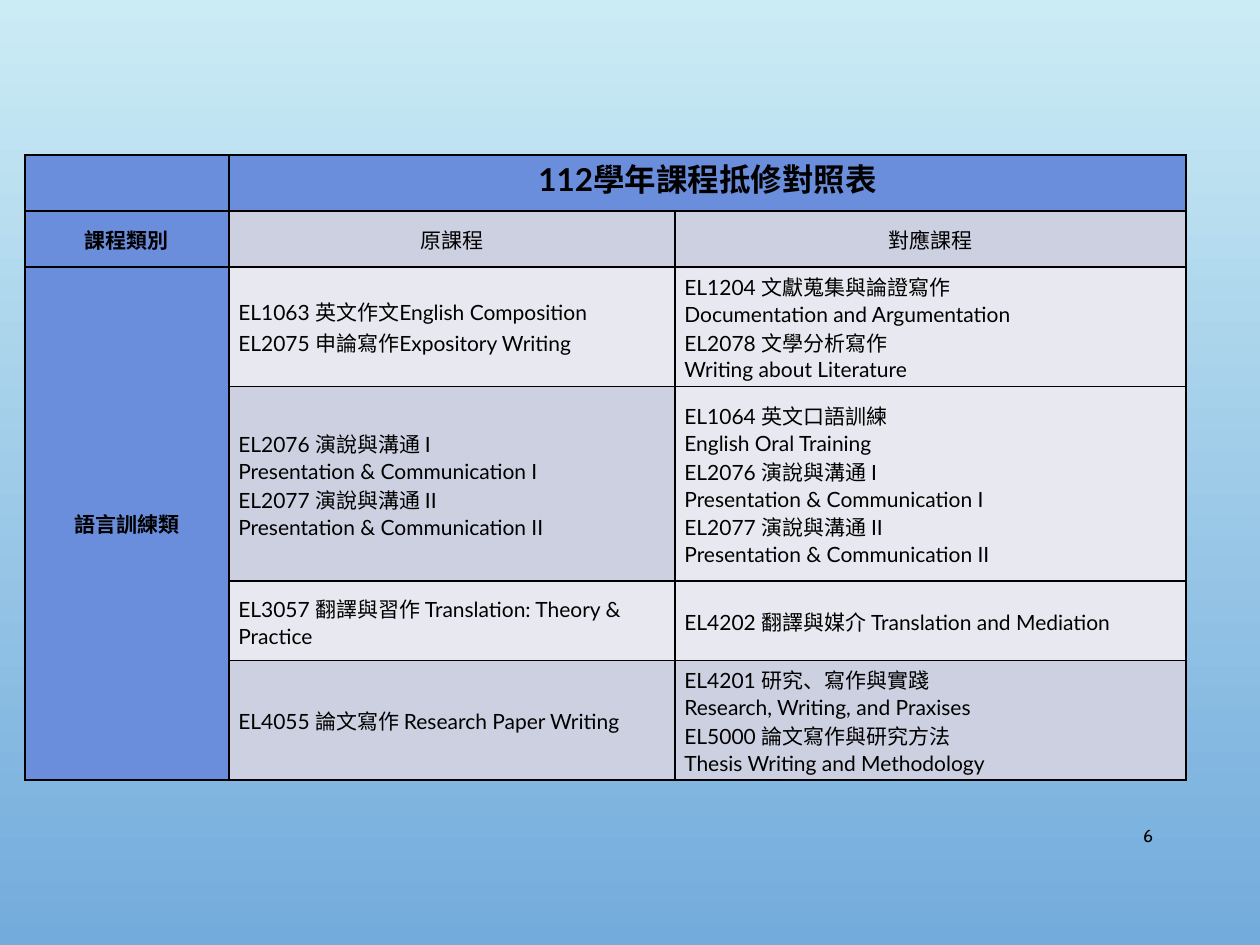
"""Build the course substitution table slide."""
from pptx import Presentation
from pptx.dml.color import RGBColor as Rgb
from pptx.enum.text import MSO_ANCHOR as Anchor, PP_ALIGN as Align
from pptx.oxml import parse_xml
from pptx.oxml.ns import nsdecls
from pptx.util import Pt

THEME = dict(
    sky="CBECF5", sea="73ABDC", head="6A8EDC", dark="CDD0E0", light="E8E9F0",
    ink="000000", font="Lato", num="Cabin", title=18, body=12, small=10, line=1,
)
COLS = (116.6, 254.9, 292)
ROWS = (32, 32, 68.2, 111.4, 45.4, 68.2)
HEADS = [
    (0, 0, "", "head"),
    (0, 1, "112學年課程抵修對照表", "head"),
    (1, 0, "課程類別", "head"),
    (1, 1, "原課程", "dark"),
    (1, 2, "對應課程", "dark"),
    (2, 0, "語言訓練類", "head"),
]
TALKS = [
    "EL2076 演說與溝通 I", "Presentation & Communication I",
    "EL2077 演說與溝通 II", "Presentation & Communication II",
]
COURSES = [
    (["EL1063 英文作文English Composition", "EL2075 申論寫作Expository Writing"], "light",
     ["EL1204 文獻蒐集與論證寫作", "Documentation and Argumentation",
      "EL2078 文學分析寫作", "Writing about Literature"], "light"),
    (TALKS, "dark", ["EL1064 英文口語訓練", "English Oral Training"] + TALKS, "light"),
    (["EL3057 翻譯與習作 Translation: Theory & Practice"], "light",
     ["EL4202 翻譯與媒介 Translation and Mediation"], "light"),
    (["EL4055 論文寫作 Research Paper Writing"], "dark",
     ["EL4201 研究、寫作與實踐", "Research, Writing, and Praxises",
      "EL5000 論文寫作與研究方法", "Thesis Writing and Methodology"], "dark"),
]


def tint(name):
    return Rgb.from_string(THEME[name])


def write(frame, lines, size, font, align, bold=False):
    frame.text = "\n".join(lines)
    for para in frame.paragraphs:
        para.alignment = align
        face = para.font
        face.name, face.size, face.bold = THEME[font], Pt(THEME[size]), bold
        face.color.rgb = tint("ink")


def frame_cell(cell):
    props = cell._tc.get_or_add_tcPr()
    for side in "LRTB":
        props.append(parse_xml(
            f'<a:ln{side} {nsdecls("a")} w="{Pt(THEME["line"])}"><a:solidFill>'
            f'<a:srgbClr val="{THEME["ink"]}"/></a:solidFill></a:ln{side}>'))


def fill_cell(cell, lines, color, align, size="body", bold=False):
    cell.fill.solid()
    cell.fill.fore_color.rgb = tint(color)
    cell.margin_left = cell.margin_right = Pt(5.4)
    cell.margin_top = cell.margin_bottom = 0
    cell.vertical_anchor = Anchor.TOP if size == "title" else Anchor.MIDDLE
    write(cell.text_frame, lines, size, "font", align, bold)


def add_grid(slide):
    grid = slide.shapes.add_table(
        len(ROWS), len(COLS), Pt(14.2), Pt(88.6), Pt(sum(COLS)), Pt(sum(ROWS))).table
    for col, width in zip(grid.columns, COLS):
        col.width = Pt(width)
    for row, height in zip(grid.rows, ROWS):
        row.height = Pt(height)
    for cell in grid.iter_cells():
        frame_cell(cell)
    grid.cell(0, 1).merge(grid.cell(0, 2))
    grid.cell(2, 0).merge(grid.cell(5, 0))
    for row, col, text, color in HEADS:
        size = "title" if (row, col) == (0, 1) else "body"
        fill_cell(grid.cell(row, col), [text], color, Align.CENTER, size, color == "head")
    for row, (old, shade, new, tone) in enumerate(COURSES, 2):
        fill_cell(grid.cell(row, 1), old, shade, Align.LEFT)
        fill_cell(grid.cell(row, 2), new, tone, Align.LEFT)


def main():
    deck = Presentation()
    deck.slide_width, deck.slide_height = Pt(720), Pt(540)
    slide = deck.slides.add_slide(deck.slide_layouts[6])
    back = slide.background.fill
    back.gradient()
    back.gradient_angle = 270
    for stop, name, place in zip(back.gradient_stops, ("sky", "sea"), (0, 1)):
        stop.color.rgb, stop.position = tint(name), place
    add_grid(slide)
    page = slide.shapes.add_textbox(Pt(620.6), Pt(463), Pt(45.4), Pt(28.8)).text_frame
    page.word_wrap = True
    page.vertical_anchor = Anchor.MIDDLE
    write(page, ["6"], "small", "num", Align.RIGHT)
    deck.save("out.pptx")


if __name__ == "__main__":
    main()
